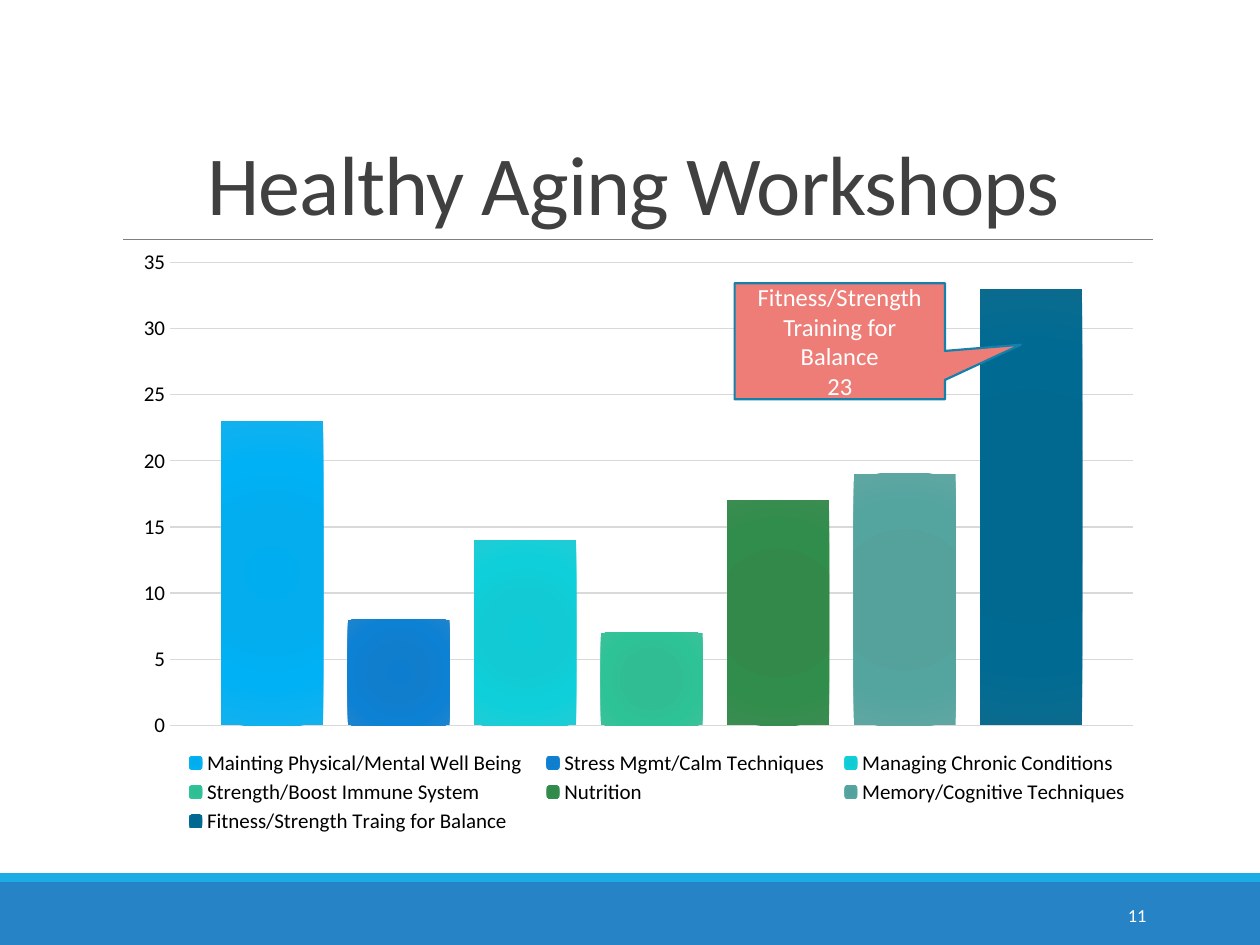
"""Build the Healthy Aging Workshops slide with its column chart and callout."""
from lxml import etree
from pptx import Presentation
from pptx.chart.data import CategoryChartData
from pptx.dml.color import RGBColor
from pptx.enum.chart import XL_CHART_TYPE, XL_LEGEND_POSITION, XL_TICK_MARK
from pptx.enum.shapes import MSO_CONNECTOR, MSO_SHAPE
from pptx.enum.text import MSO_ANCHOR, MSO_AUTO_SIZE, PP_ALIGN
from pptx.oxml import parse_xml
from pptx.oxml.ns import nsdecls, qn
from pptx.util import Cm, Pt

COLUMN = XL_CHART_TYPE.COLUMN_CLUSTERED
BOTTOM = XL_LEGEND_POSITION.BOTTOM
NO_TICK = XL_TICK_MARK.NONE
STRAIGHT = MSO_CONNECTOR.STRAIGHT
RECTANGLE = MSO_SHAPE.RECTANGLE
CALLOUT = MSO_SHAPE.RECTANGULAR_CALLOUT
CENTER, RIGHT = PP_ALIGN.CENTER, PP_ALIGN.RIGHT
MIDDLE, LOW = MSO_ANCHOR.MIDDLE, MSO_ANCHOR.BOTTOM
NO_FIT = MSO_AUTO_SIZE.NONE

FONT = "Calibri"
BLACK = RGBColor(0x00, 0x00, 0x00)
WHITE = RGBColor(0xFF, 0xFF, 0xFF)
DARK_GRAY = RGBColor(0x40, 0x40, 0x40)
RULE_GRAY = RGBColor(0x80, 0x80, 0x80)
GRID_GRAY = RGBColor(0xD9, 0xD9, 0xD9)
BAND_BLUE = RGBColor(0x26, 0x83, 0xC6)
STRIPE_BLUE = RGBColor(0x1C, 0xAD, 0xE4)
CALLOUT_RED = RGBColor(0xEE, 0x7D, 0x77)
CALLOUT_BLUE = RGBColor(0x15, 0x80, 0xA9)

GRADIENT_STOPS = (0, 34, 70, 100)
WORKSHOPS = [
    ("Mainting Physical/Mental Well Being ", 23, "00ADEF 03ADEE 00B1F5 12B1EE"),
    ("Stress Mgmt/Calm Techniques", 8, "0D7ECF 117ECD 0D81D4 1E84CE"),
    ("Managing Chronic Conditions ", 14, "0ECBD5 12CAD3 0FD0DA 20CBD4"),
    ("Strength/Boost Immune System ", 7, "2DBE94 30BD94 2EC397 3CC09A"),
    ("Nutrition ", 17, "2F8949 32894A 318D4B 3A8C51"),
    ("Memory/Cognitive Techniques", 19, "52A19C 55A19C 54A5A0 5FA6A2"),
    ("Fitness/Strength Traing for Balance", 33, "00688F 01688F 006A93 0A6B8F"),
]


def format_font(font, size, color):
    font.name = FONT
    font.size = Pt(size)
    font.color.rgb = color


def write_text(shape, text, size, color, align, anchor=MIDDLE, line_spacing=None):
    frame = shape.text_frame
    frame.word_wrap = True
    frame.auto_size = NO_FIT
    frame.vertical_anchor = anchor
    frame.text = text
    for paragraph in frame.paragraphs:
        paragraph.alignment = align
        paragraph.line_spacing = line_spacing
        format_font(paragraph.runs[0].font, size, color)


presentation = Presentation()
presentation.slide_width, presentation.slide_height = Cm(25.4), Cm(19.05)
slide = presentation.slides.add_slide(presentation.slide_layouts[5])
shapes = slide.shapes

for top, height, color in ((17.78, 1.27, BAND_BLUE), (17.6, 0.18, STRIPE_BLUE)):
    band = shapes.add_shape(RECTANGLE, 0, Cm(top), Cm(25.4), Cm(height))
    band.shadow.inherit = False
    band.fill.solid()
    band.fill.fore_color.rgb = color
    band.line.fill.background()

title_rule = shapes.add_connector(STRAIGHT, Cm(2.48), Cm(4.83), Cm(23.24), Cm(4.83))
title_rule.line.color.rgb = RULE_GRAY
title_rule.line.width = Pt(0.5)
etree.SubElement(title_rule._element.spPr, qn("a:effectLst"))

title = shapes.title
title.left, title.top, title.width, title.height = Cm(2.29), Cm(0.79), Cm(20.96), Cm(4.03)
write_text(title, "Healthy Aging Workshops", 48, DARK_GRAY, CENTER, LOW, 0.85)
title.text_frame.paragraphs[0].runs[0]._r.get_or_add_rPr().set("spc", "-50")

page_number = shapes.add_textbox(Cm(20.62), Cm(17.93), Cm(2.74), Cm(1.02))
write_text(page_number, "11", 10.5, WHITE, RIGHT)

chart_data = CategoryChartData()
chart_data.categories = ["1"]
for name, value, colors in WORKSHOPS:
    chart_data.add_series(name, [value])
chart = shapes.add_chart(COLUMN, Cm(2.29), Cm(4.82), Cm(21.08), Cm(12.32), chart_data).chart
chart.has_title = False
format_font(chart.font, 10, BLACK)
chart.has_legend = True
chart.legend.position = BOTTOM
chart.legend.include_in_layout = False
format_font(chart.legend.font, 12, BLACK)

chart.category_axis.visible = False
value_axis = chart.value_axis
value_axis.minimum_scale, value_axis.maximum_scale, value_axis.major_unit = 0, 35, 5
value_axis.major_tick_mark = NO_TICK
value_axis.minor_tick_mark = NO_TICK
value_axis.format.line.fill.background()
value_axis.major_gridlines.format.line.color.rgb = GRID_GRAY
value_axis.major_gridlines.format.line.width = Pt(0.75)
format_font(value_axis.tick_labels.font, 12, BLACK)

plot = chart.plots[0]
plot.vary_by_categories = False
plot.gap_width = 100
plot.overlap = -24
for series, (name, value, colors) in zip(plot.series, WORKSHOPS):
    series.format.fill.solid()
    series.format.line.fill.background()
    stops = "".join(
        f'<a:gs pos="{stop * 1000}"><a:srgbClr val="{color}"/></a:gs>'
        for stop, color in zip(GRADIENT_STOPS, colors.split())
    )
    gradient = parse_xml(
        f'<a:gradFill {nsdecls("a")} rotWithShape="1"><a:gsLst>{stops}</a:gsLst>'
        '<a:path path="circle"><a:fillToRect l="100000" t="100000" r="100000" b="100000"/>'
        "</a:path></a:gradFill>"
    )
    solid = series._element.find(qn("c:spPr")).find(qn("a:solidFill"))
    solid.getparent().replace(solid, gradient)

chart_element = chart._chartSpace.find(qn("c:chart"))
for part, index, target, (x, y, width, height) in (
    ("c:plotArea", 0, '<c:layoutTarget val="inner"/>', (0.054, 0.038, 0.921, 0.758)),
    ("c:legend", 1, "", (0.06, 0.83, 0.92, 0.15)),
):
    element = chart_element.find(qn(part))
    for old_layout in element.findall(qn("c:layout")):
        element.remove(old_layout)
    layout = parse_xml(
        f'<c:layout {nsdecls("c")}><c:manualLayout>{target}'
        f'<c:xMode val="edge"/><c:yMode val="edge"/><c:x val="{x}"/><c:y val="{y}"/>'
        f'<c:w val="{width}"/><c:h val="{height}"/></c:manualLayout></c:layout>'
    )
    element.insert(index, layout)

callout = shapes.add_shape(CALLOUT, Cm(14.81), Cm(5.71), Cm(4.24), Cm(2.34))
callout.shadow.inherit = False
callout.adjustments[0], callout.adjustments[1] = 0.86, 0.03
callout.fill.solid()
callout.fill.fore_color.rgb = CALLOUT_RED
callout.line.color.rgb = CALLOUT_BLUE
callout.line.width = Pt(1.25)
write_text(callout, "Fitness/Strength Training for Balance\n23", 14, WHITE, CENTER)

presentation.save("out.pptx")
